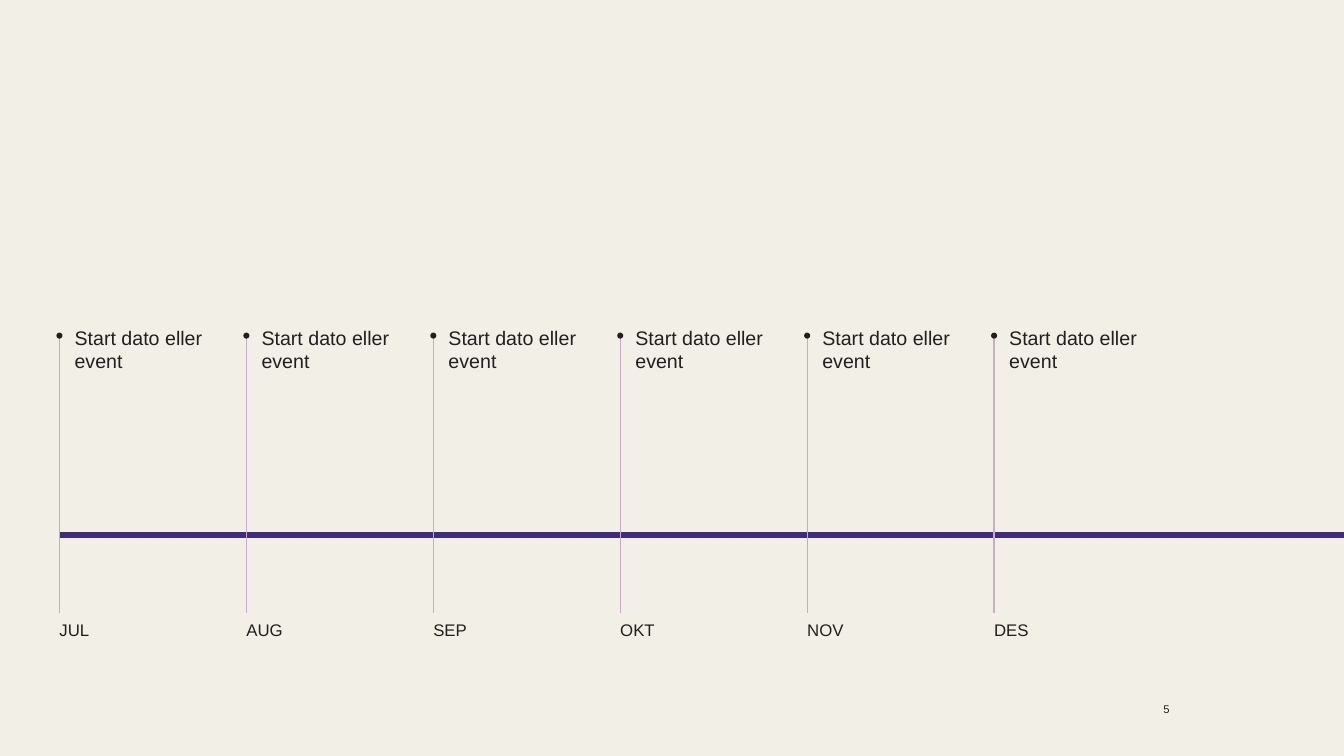
"""Build a half-year timeline slide with one event marker per month."""
from pptx import Presentation
from pptx.dml.color import RGBColor
from pptx.enum.shapes import MSO_CONNECTOR, MSO_SHAPE
from pptx.enum.text import MSO_AUTO_SIZE, PP_ALIGN
from pptx.oxml.ns import qn
from pptx.util import Inches, Pt
from lxml.etree import SubElement

COLORS = {"background": "F2EFE7", "axis": "412B7B", "marker": "C7AACC", "ink": "231F20"}
FONT = "Arial"
MONTHS = ["JUL", "AUG", "SEP", "OKT", "NOV", "DES"]
EVENT = "Start dato eller event"
SLIDE_W, SLIDE_H = 13.33, 7.5
LEFT, LAST = 0.59, 9.86
PITCH = (LAST - LEFT) / (len(MONTHS) - 1)
AXIS_Y, MARKER_TOP, MARKER_BOTTOM = 5.31, 3.33, 6.08
DOT = 0.06


def color(name):
    return RGBColor.from_string(COLORS[name])


def add_line(shapes, x1, y1, x2, y2, name, width):
    line = shapes.add_connector(
        MSO_CONNECTOR.STRAIGHT, Inches(x1), Inches(y1), Inches(x2), Inches(y2))
    line.line.color.rgb = color(name)
    line.line.width = Pt(width)
    SubElement(line._element.spPr, qn("a:effectLst"))


def add_text(shapes, text, x, y, w, h, size, align=PP_ALIGN.LEFT):
    tf = shapes.add_textbox(Inches(x), Inches(y), Inches(w), Inches(h)).text_frame
    tf.word_wrap = True
    tf.auto_size = MSO_AUTO_SIZE.NONE
    tf.margin_left = tf.margin_top = tf.margin_right = tf.margin_bottom = 0
    tf.text = text
    p = tf.paragraphs[0]
    p.alignment = align
    font = p.runs[0].font
    font.name, font.size = FONT, Pt(size)
    font.color.rgb = color("ink")


def add_marker(shapes, x):
    group = shapes.add_group_shape().shapes
    add_line(group, x, MARKER_TOP, x, MARKER_BOTTOM, "marker", 1)
    dot = group.add_shape(
        MSO_SHAPE.OVAL, Inches(x - DOT / 2), Inches(MARKER_TOP - DOT / 2),
        Inches(DOT), Inches(DOT))
    dot.shadow.inherit = False
    dot.fill.solid()
    dot.fill.fore_color.rgb = color("ink")
    dot.line.fill.background()


def add_month(shapes, month, x):
    add_marker(shapes, x)
    add_text(shapes, EVENT, x + 0.15, 3.23, 1.53, 0.47, 14)
    add_text(shapes, month, x, 6.15, 0.63, 0.2, 12)


def main():
    prs = Presentation()
    prs.slide_width, prs.slide_height = Inches(SLIDE_W), Inches(SLIDE_H)
    s = prs.slides.add_slide(prs.slide_layouts[6])
    s.background.fill.solid()
    s.background.fill.fore_color.rgb = color("background")
    add_text(s.shapes, "5", 11.31, 6.97, 0.29, 0.16, 8, PP_ALIGN.RIGHT)
    add_line(s.shapes, LEFT, AXIS_Y, SLIDE_W, AXIS_Y, "axis", 4.5)
    for i, month in enumerate(MONTHS):
        add_month(s.shapes, month, LEFT + i * PITCH)
    prs.save("out.pptx")


if __name__ == "__main__":
    main()
